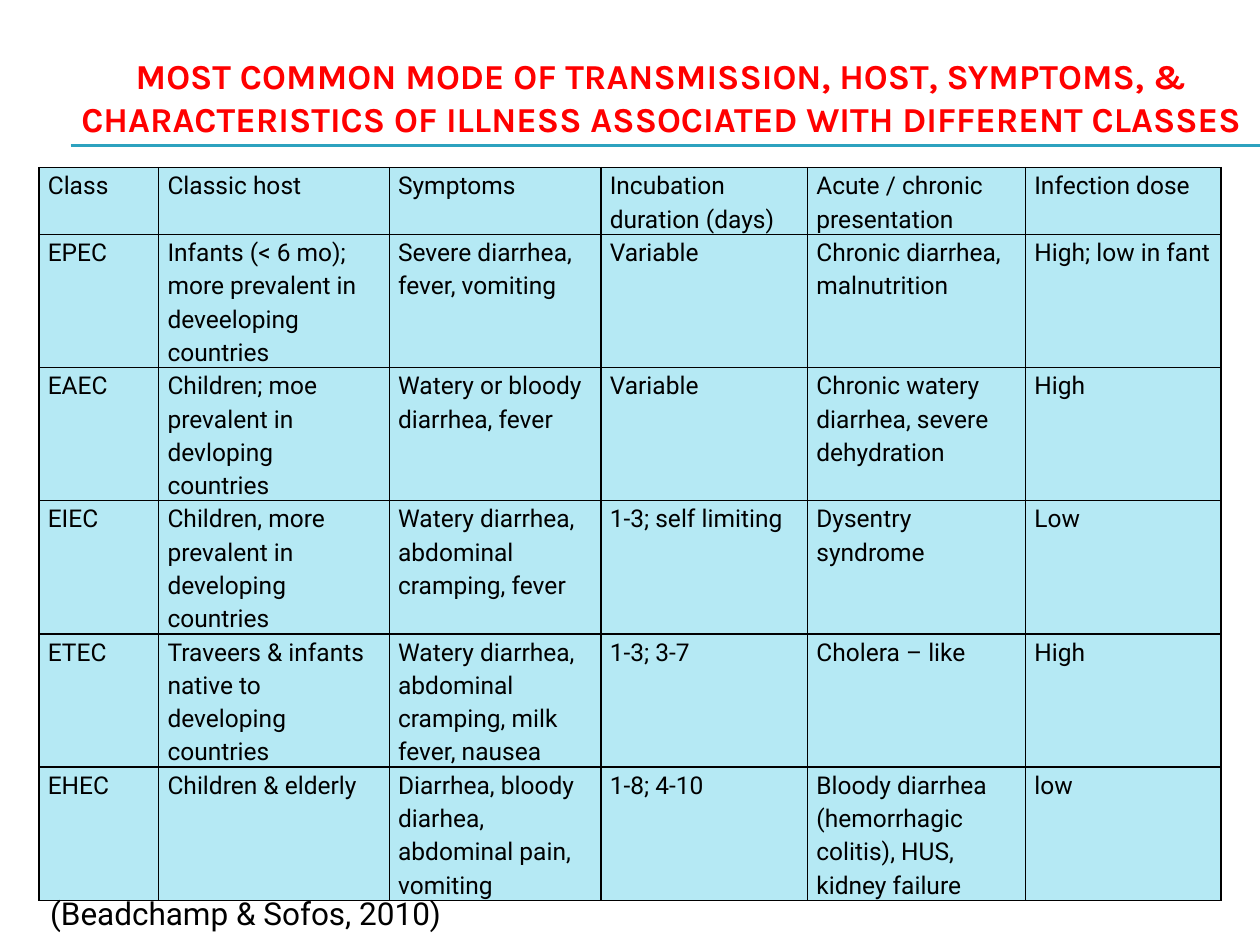
import lxml.etree
import pptx
import pptx.dml.color
import pptx.enum.shapes
import pptx.enum.text
import pptx.oxml.ns
import pptx.util

Inches = pptx.util.Inches
Pt = pptx.util.Pt
RGBColor = pptx.dml.color.RGBColor
qn = pptx.oxml.ns.qn

RED = RGBColor(0xFF, 0x00, 0x00)
BLACK = RGBColor(0x00, 0x00, 0x00)
TEAL = RGBColor(0x2D, 0xA2, 0xBF)
PALE_BLUE = RGBColor(0xB5, 0xE9, 0xF4)

COLUMN_WIDTHS = [0.95, 1.83, 1.68, 1.64, 1.73, 1.55]
HEADER_HEIGHT = 0.53
CLASS_HEIGHT = 1.05
ROWS = [
    ["Class", "Classic host", "Symptoms", "Incubation duration (days)",
     "Acute / chronic presentation", "Infection dose"],
    ["EPEC", "Infants (< 6 mo); more prevalent in deveeloping countries",
     "Severe diarrhea, fever, vomiting", "Variable",
     "Chronic diarrhea, malnutrition", "High; low in fant"],
    ["EAEC", "Children; moe prevalent in devloping countries",
     "Watery or bloody diarrhea, fever", "Variable",
     "Chronic watery diarrhea, severe dehydration", "High"],
    ["EIEC", "Children, more prevalent in developing countries",
     "Watery diarrhea, abdominal cramping, fever", "1-3; self limiting",
     "Dysentry syndrome", "Low"],
    ["ETEC", "Traveers & infants native to developing countries",
     "Watery diarrhea, abdominal cramping, milk fever, nausea", "1-3; 3-7",
     "Cholera – like", "High"],
    ["EHEC", "Children & elderly",
     "Diarrhea, bloody diarhea, abdominal pain, vomiting", "1-8; 4-10",
     "Bloody diarrhea (hemorrhagic colitis), HUS, kidney failure", "low"],
]


def set_font(paragraph, name, size, color, bold=False):
    font = paragraph.font
    font.name = name
    font.size = Pt(size)
    font.color.rgb = color
    font.bold = bold


def add_borders(cell, color, width):
    """Draw all four edges; call before setting the fill, which must follow them."""
    properties = cell._tc.get_or_add_tcPr()
    for edge in ("a:lnL", "a:lnR", "a:lnT", "a:lnB"):
        line = lxml.etree.SubElement(properties, qn(edge), w=str(Pt(width)))
        fill = lxml.etree.SubElement(line, qn("a:solidFill"))
        lxml.etree.SubElement(fill, qn("a:srgbClr"), val=str(color))


presentation = pptx.Presentation()
presentation.slide_width = Inches(10)
presentation.slide_height = Inches(7.5)
slide = presentation.slides.add_slide(presentation.slide_layouts[5])

# Double rule under the title
for y in (1.15, 1.16):
    rule = slide.shapes.add_connector(
        pptx.enum.shapes.MSO_CONNECTOR.STRAIGHT,
        Inches(0.56), Inches(y), Inches(10), Inches(y))
    rule.line.color.rgb = TEAL
    rule.line.width = Pt(0.75)
    lxml.etree.SubElement(rule._element.spPr, qn("a:effectLst"))

title = slide.shapes.title
title.left, title.top = Inches(0.5), Inches(0.31)
title.width, title.height = Inches(9.5), Inches(0.92)
heading = title.text_frame
heading.text = ("MOST COMMON MODE OF TRANSMISSION, HOST, SYMPTOMS, & "
                "CHARACTERISTICS OF ILLNESS ASSOCIATED WITH DIFFERENT CLASSES")
heading.auto_size = pptx.enum.text.MSO_AUTO_SIZE.NONE
heading.vertical_anchor = pptx.enum.text.MSO_ANCHOR.MIDDLE
heading.paragraphs[0].alignment = pptx.enum.text.PP_ALIGN.CENTER
set_font(heading.paragraphs[0], "Karla", 20, RED, bold=True)

# Table of classes
row_heights = [HEADER_HEIGHT] + [CLASS_HEIGHT] * (len(ROWS) - 1)
classes = slide.shapes.add_table(
    len(ROWS), len(COLUMN_WIDTHS), Inches(0.31), Inches(1.33),
    Inches(sum(COLUMN_WIDTHS)), Inches(sum(row_heights))).table
classes.first_row = False
classes.horz_banding = False
for column, width in zip(classes.columns, COLUMN_WIDTHS):
    column.width = Inches(width)
for row, height, texts in zip(classes.rows, row_heights, ROWS):
    row.height = Inches(height)
    for cell, text in zip(row.cells, texts):
        cell.text = text
        cell.margin_left = cell.margin_right = Inches(0.07)
        cell.margin_top = cell.margin_bottom = 0
        add_borders(cell, BLACK, 1)
        cell.fill.solid()
        cell.fill.fore_color.rgb = PALE_BLUE
        paragraph = cell.text_frame.paragraphs[0]
        paragraph.line_spacing = 1.15
        set_font(paragraph, "Roboto", 14, BLACK)

citation = slide.shapes.add_textbox(
    Inches(0.3), Inches(7.05), Inches(3.34), Inches(0.4)).text_frame
citation.text = "(Beadchamp & Sofos, 2010)"
citation.word_wrap = False
citation.auto_size = pptx.enum.text.MSO_AUTO_SIZE.SHAPE_TO_FIT_TEXT
set_font(citation.paragraphs[0], "Roboto", 18, BLACK)

presentation.save("out.pptx")
